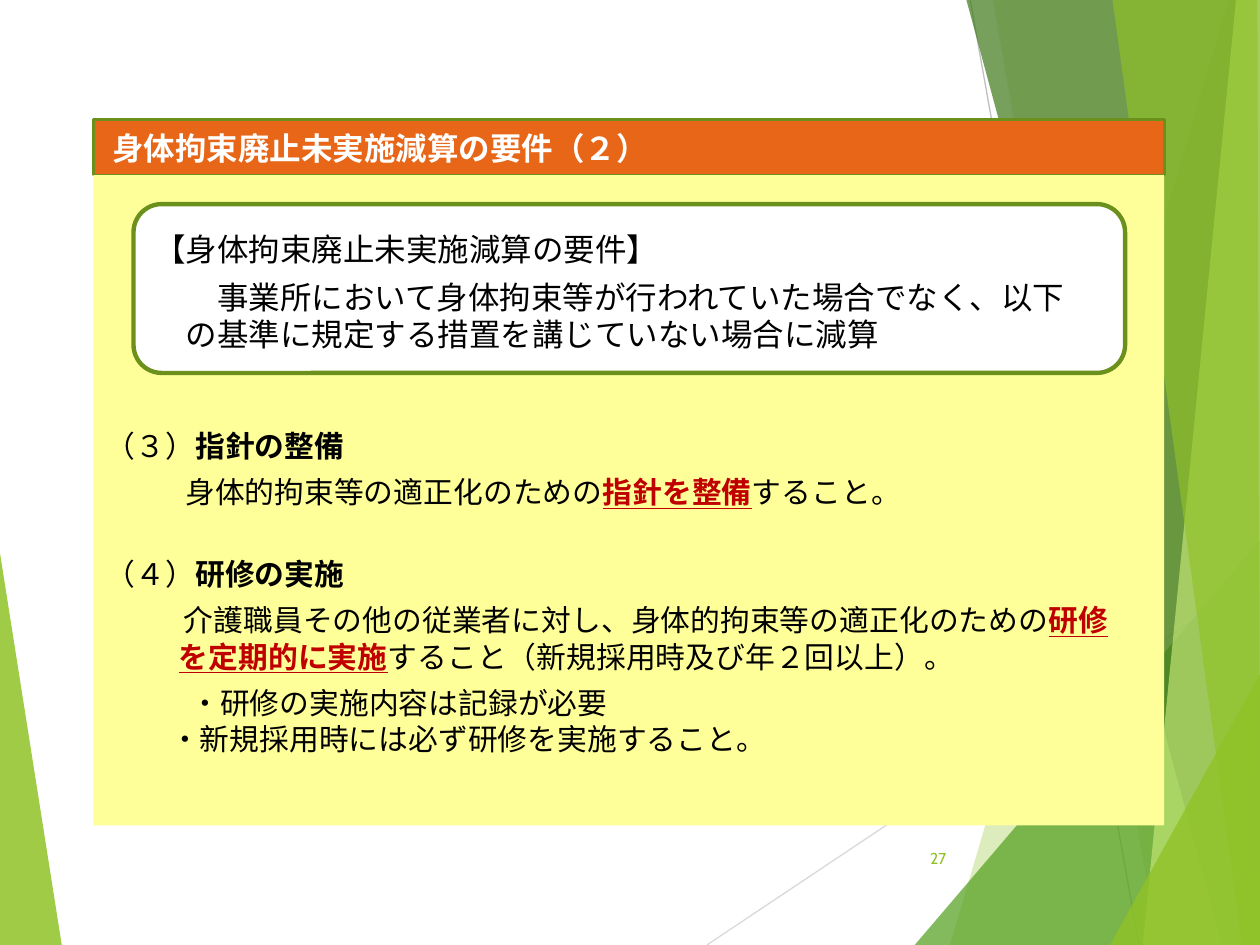
from dataclasses import dataclass

from lxml import etree
from pptx import Presentation
from pptx import util as u
from pptx.dml.color import RGBColor
from pptx.enum import shapes, text
from pptx.oxml.ns import qn


@dataclass(frozen=True)
class Theme:
    lime: str = "90C226"
    green: str = "54A021"
    forest: str = "3F7819"
    pale: str = "C0E474"
    outline: str = "6B901C"
    orange: str = "E76618"
    yellow: str = "FFFF99"
    white: str = "FFFFFF"
    black: str = "000000"
    red: str = "C00000"
    heading_size: float = 18
    body_size: float = 17
    number_size: float = 9
    heading_font: str = "Cabin"
    body_font: str = "Arial"


T = Theme()
rgb = RGBColor.from_string


def add_paragraph(tf, *runs, left=0, first=0, align="LEFT", before=0, after=0,
                  leading=1.0, size=T.body_size, font=T.body_font,
                  color=T.black, bold=False):
    """Add a paragraph; each run is a string or (string, format overrides)."""
    p = tf.paragraphs[0]
    if p.runs:
        p = tf.add_paragraph()
    p.alignment = getattr(text.PP_ALIGN, align)
    p.space_before, p.space_after = u.Pt(before), u.Pt(after)
    p.line_spacing = leading
    pPr = p._p.get_or_add_pPr()
    pPr.set("marL", str(u.Inches(left)))
    pPr.set("indent", str(u.Inches(first)))
    etree.SubElement(pPr, qn("a:buNone"))
    for run in runs:
        words, fmt = run if isinstance(run, tuple) else (run, {})
        r = p.add_run()
        r.text = words
        r.font.name, r.font.size = font, u.Pt(size)
        r.font.bold = fmt.get("bold", bold)
        r.font.underline = fmt.get("underline", False)
        r.font.color.rgb = rgb(fmt.get("color", color))


def format_box(sp, box, fill=None, line=None, width=0, anchor="MIDDLE", **margins):
    """Place a text shape, style it and return its empty text frame."""
    sp.left, sp.top, sp.width, sp.height = map(u.Inches, box)
    if fill:
        sp.fill.solid()
        sp.fill.fore_color.rgb = rgb(fill)
    if line:
        sp.line.color.rgb = rgb(line)
        sp.line.width = u.Pt(width)
    tf = sp.text_frame
    tf.word_wrap = True
    tf.auto_size = text.MSO_AUTO_SIZE.NONE
    tf.vertical_anchor = getattr(text.MSO_ANCHOR, anchor)
    for side, inches in margins.items():
        setattr(tf, f"margin_{side}", u.Inches(inches))
    return tf


prs = Presentation()
prs.slide_width, prs.slide_height = u.Inches(10), u.Inches(7.5)
s = prs.slides.add_slide(prs.slide_layouts[1])

# Background facets: colour, opacity in percent, corner points
left_facet = (T.lime, 85, [(0, 4.39), (0.49, 7.5), (0, 7.5)])
right_facets = [
    (T.lime, 30, [(9.75, 0), (7.54, 7.5), (10, 7.5), (10, 0)]),
    (T.lime, 20, [(7.88, 0), (9.19, 7.5), (10, 7.5), (10, 0)]),
    (T.green, 72, [(7.26, 7.5), (10, 4.29), (10, 7.5)]),
    (T.forest, 70, [(7.67, 0), (9.7, 7.5), (10, 7.5), (10, 0)]),
    (T.pale, 70, [(9.81, 0), (9.07, 7.5), (10, 7.5), (10, 0)]),
    (T.lime, 65, [(8.83, 0), (9.86, 7.5), (10, 7.5), (9.98, 0)]),
    (T.lime, 80, [(8.81, 7.5), (10, 5.35), (10, 7.5)]),
]
rays = [("D9D9D9", (5.61, 7.5, 10, 4.57)), ("BFBFBF", (7.7, 0, 9.04, 7.5))]

for color, ends in rays:
    c = s.shapes.add_connector(shapes.MSO_CONNECTOR.STRAIGHT, *map(u.Inches, ends))
    c.line.color.rgb = rgb(color)
    c.line.width = u.Pt(0.75)
    etree.SubElement(c._element.spPr, qn("a:effectLst"))

for color, opacity, corners in [left_facet, *right_facets]:
    points = [(u.Inches(x), u.Inches(y)) for x, y in corners]
    outline = s.shapes.build_freeform(*points[0])
    outline.add_line_segments(points[1:], close=True)
    sp = outline.convert_to_shape()
    sp.shadow.inherit = False
    sp.line.fill.background()
    sp.fill.solid()
    sp.fill.fore_color.rgb = rgb(color)
    srgb = sp._element.spPr.find(".//" + qn("a:srgbClr"))
    etree.SubElement(srgb, qn("a:alpha"), val=str(opacity * 1000))

# Page number
box = (7.05, 6.61, 0.56, 0.4)
tf = format_box(s.shapes.add_textbox(*map(u.Inches, box)), box)
add_paragraph(tf, "27", align="RIGHT", size=T.number_size,
              font=T.heading_font, color=T.lime)

# Title bar and body panel stand in front of the facets
title, body = s.shapes.title, s.placeholders[1]
for holder in (title, body):
    s.shapes.element.append(holder.element)

tf = format_box(title, (0.74, 0.95, 8.5, 0.44), T.orange, T.outline, 1.5, left=0.15)
geometry = etree.Element(qn("a:prstGeom"), prst="roundRect")
etree.SubElement(geometry, qn("a:avLst"))
title.element.spPr.insert(1, geometry)
add_paragraph(tf, "身体拘束廃止未実施減算の要件（２）", size=T.heading_size,
              font=T.heading_font, color=T.white, bold=True)

strong = {"bold": True}
key = {"bold": True, "underline": True, "color": T.red}
leading = u.Pt(20.6)
tf = format_box(body, (0.74, 1.39, 8.5, 5.16), T.yellow, anchor="TOP",
                left=0.1, top=2, right=0.3)
add_paragraph(tf, "（３）", ("指針の整備", strong), after=6, leading=leading)
add_paragraph(tf, "身体的拘束等の適正化のための", ("指針を整備", key), "すること。",
              left=0.63, leading=leading)
add_paragraph(tf, "（４）", ("研修の実施", strong), before=26, after=6, leading=leading)
add_paragraph(tf, "介護職員その他の従業者に対し、身体的拘束等の適正化のための",
              ("研修を定期的に実施", key), "すること（新規採用時及び年２回以上）。",
              left=0.58, first=0.04, after=6, leading=leading)
add_paragraph(tf, "・研修の実施内容は記録が必要", left=0.67, leading=leading)
add_paragraph(tf, "・新規採用時には必ず研修を実施すること。", left=0.51, leading=leading)

# Requirement box
box = (1.06, 1.62, 7.87, 1.34)
sp = s.shapes.add_shape(shapes.MSO_SHAPE.ROUNDED_RECTANGLE, *map(u.Inches, box))
sp.shadow.inherit = False
tf = format_box(sp, box, T.white, T.outline, 2.5, top=0.1, right=0.3)
leading = u.Pt(21.1)
add_paragraph(tf, "【身体拘束廃止未実施減算の要件】", after=6,
              size=T.heading_size, leading=leading)
add_paragraph(tf, "事業所において身体拘束等が行われていた場合でなく、以下"
              "の基準に規定する措置を講じていない場合に減算",
              left=0.25, first=0.25, size=T.heading_size, leading=leading)

prs.save("out.pptx")
